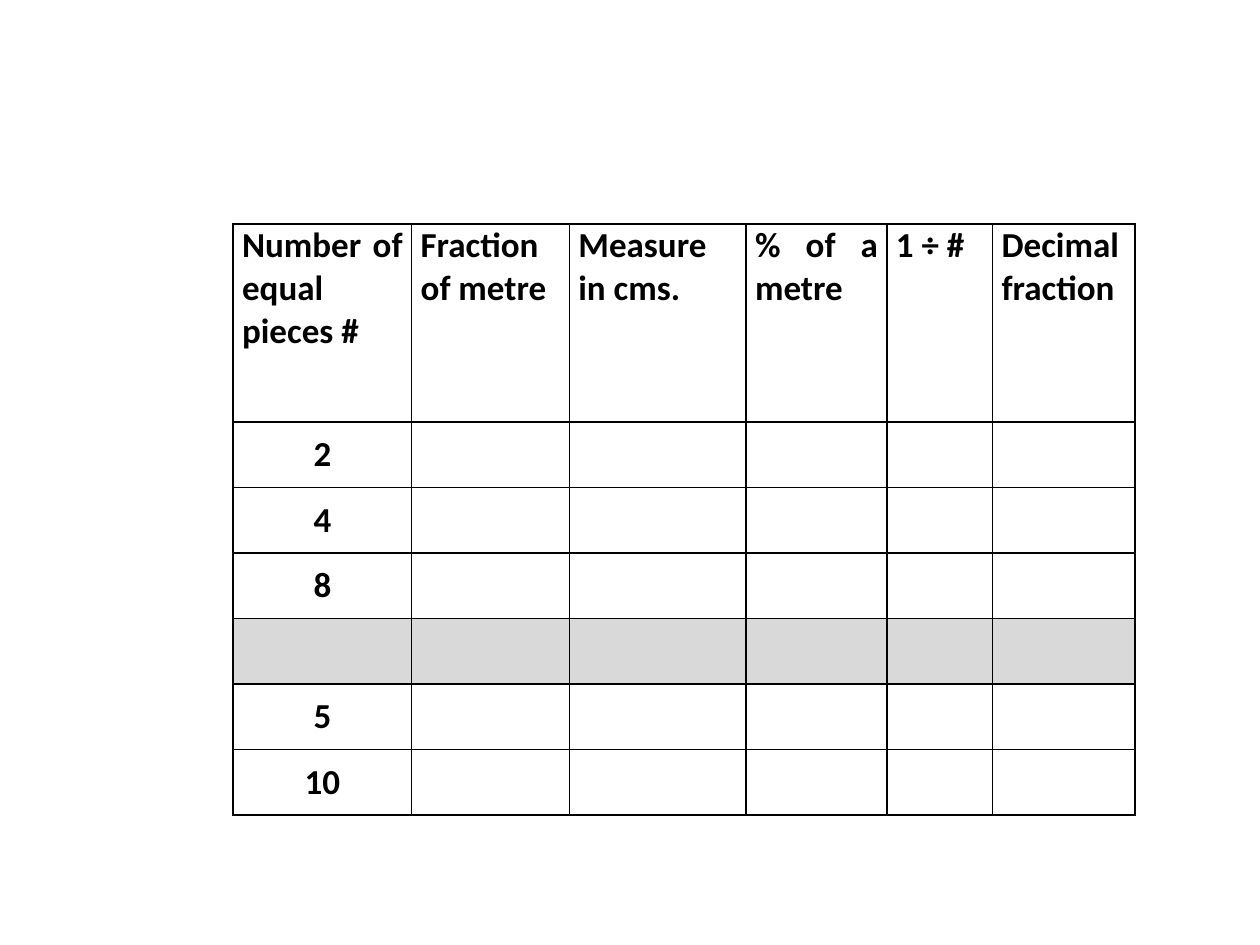
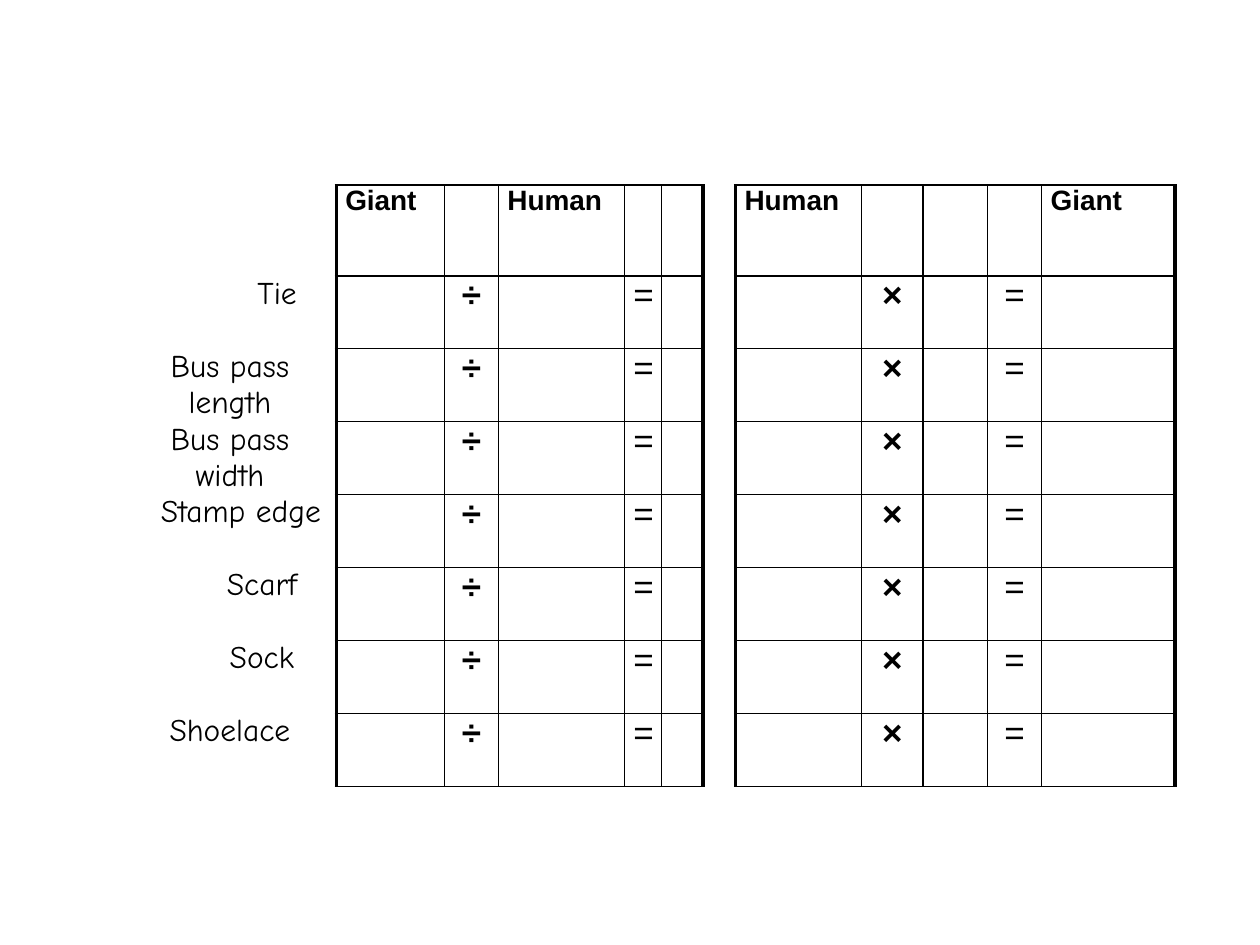
import pptx
import pptx.dml.color
import pptx.enum.text
import pptx.oxml
import pptx.oxml.ns
import pptx.util

Cm = pptx.util.Cm
ALIGN = pptx.enum.text.PP_ALIGN
ANCHOR = pptx.enum.text.MSO_ANCHOR

# Shared look
BLACK, GREY = "000000", "D9D9D9"
THIN, THICK = 1, 2.25
SIDE_MARGIN = 0.18

# Text styles: font, size, bold, alignment, vertical anchor
METRE_HEAD = ("Calibri", 20, True, ALIGN.JUSTIFY, ANCHOR.TOP)
METRE_BODY = ("Calibri", 20, True, ALIGN.CENTER, ANCHOR.MIDDLE)
GIANT_HEAD = ("Arial", 16, True, ALIGN.JUSTIFY, ANCHOR.TOP)
ITEM = ("Comic Neue", 18, False, ALIGN.CENTER, ANCHOR.TOP)
OPERATOR = ("Arial", 20, True, ALIGN.CENTER, ANCHOR.TOP)
EQUALS = ("Arial", 20, False, ALIGN.CENTER, ANCHOR.TOP)

# Slide 1: fractions of a metre (None marks the grey divider row)
METRE_HEADINGS = ["Number of equal pieces #", "Fraction of metre", "Measure in cms.",
                  "% of a metre", "1 ÷ #", "Decimal fraction"]
PIECES = ["2", "4", "8", None, "5", "10"]
METRE_WIDTHS = [3.6, 3.18, 3.56, 2.84, 2.13, 2.87]
METRE_HEIGHTS = [3.99] + [1.32] * len(PIECES)

# Slide 2: giant and human sizes, each item with its left indent in cm
ITEMS = [("Tie", 1.9), ("Bus pass length", 0), ("Bus pass width", 0), ("Stamp edge", 0.44),
         ("Scarf", 1.29), ("Sock", 1.29), ("Shoelace", 0)]
GIANT_HEADINGS = {1: "Giant", 3: "Human", 7: "Human", 11: "Giant"}
SIGNS = {2: ("÷", OPERATOR), 4: ("=", EQUALS), 8: ("×", OPERATOR), 10: ("=", EQUALS)}
GIANT_WIDTHS = [4.29, 2.18, 1.09, 2.54, 0.74, 0.84, 0.66, 2.54, 1.24, 1.3, 1.09, 2.69]
GIANT_HEIGHTS = [1.83] + [1.47] * len(ITEMS)
OPEN_COLUMNS = {0, 6}          # item names and the gap between the two grids
THICK_EDGES = {1, 6, 7, 12}    # outer sides of the two grids


def color(hex_string):
    return pptx.dml.color.RGBColor.from_string(hex_string)


def set_borders(cell, left, right, top, bottom):
    """Draw the four cell edges; a width of 0 means no line."""
    properties = cell._tc.get_or_add_tcPr()
    for position, (side, width) in enumerate(zip("LRTB", (left, right, top, bottom))):
        paint = f'<a:solidFill><a:srgbClr val="{BLACK}"/></a:solidFill>' if width else "<a:noFill/>"
        edge = pptx.oxml.parse_xml(
            f'<a:ln{side} {pptx.oxml.ns.nsdecls("a")} w="{int(width * 12700)}">{paint}</a:ln{side}>')
        properties.insert(position, edge)


def write(cell, text, style, indent=0):
    font, size, bold, align, anchor = style
    cell.text_frame.text = text
    cell.vertical_anchor = anchor
    cell.margin_left = Cm(SIDE_MARGIN + indent)
    paragraph = cell.text_frame.paragraphs[0]
    paragraph.alignment = align
    for run in paragraph.runs:
        run.font.name = font
        run.font.size = pptx.util.Pt(size)
        run.font.bold = bold
        run.font.color.rgb = color(BLACK)


def add_grid(deck, left, top, widths, heights, edges, open_columns=()):
    """Add a slide with an empty ruled table; edges are the vertical line widths."""
    slide = deck.slides.add_slide(deck.slide_layouts[6])
    grid = slide.shapes.add_table(len(heights), len(widths), Cm(left), Cm(top),
                                  Cm(sum(widths)), Cm(sum(heights))).table
    grid.first_row = grid.horz_banding = False
    for column, width in zip(grid.columns, widths):
        column.width = Cm(width)
    for row, height in zip(grid.rows, heights):
        row.height = Cm(height)
        for number, cell in enumerate(row.cells):
            cell.margin_left = cell.margin_right = Cm(SIDE_MARGIN)
            cell.margin_top = cell.margin_bottom = 0
            cell.fill.background()
            rule = 0 if number in open_columns else THIN
            set_borders(cell, edges[number], edges[number + 1], rule, rule)
    return grid


def add_metre_slide(deck):
    grid = add_grid(deck, 4.7, 4.52, METRE_WIDTHS, METRE_HEIGHTS,
                    [THIN] * (len(METRE_WIDTHS) + 1))
    for column, heading in enumerate(METRE_HEADINGS):
        write(grid.cell(0, column), heading, METRE_HEAD)
    for row, pieces in enumerate(PIECES, start=1):
        if pieces:
            write(grid.cell(row, 0), pieces, METRE_BODY)
            continue
        for cell in grid.rows[row].cells:
            cell.fill.solid()
            cell.fill.fore_color.rgb = color(GREY)


def add_giant_slide(deck):
    edges = [THICK if edge in THICK_EDGES else THIN for edge in range(len(GIANT_WIDTHS) + 1)]
    edges[0] = 0
    grid = add_grid(deck, 2.49, 3.73, GIANT_WIDTHS, GIANT_HEIGHTS, edges, OPEN_COLUMNS)
    for column, heading in GIANT_HEADINGS.items():
        write(grid.cell(0, column), heading, GIANT_HEAD)
    for row, (item, indent) in enumerate(ITEMS, start=1):
        write(grid.cell(row, 0), item, ITEM, indent)
        for column, (sign, style) in SIGNS.items():
            write(grid.cell(row, column), sign, style)


def main():
    deck = pptx.Presentation()
    deck.slide_width, deck.slide_height = Cm(25.4), Cm(19.05)
    add_metre_slide(deck)
    add_giant_slide(deck)
    deck.save("out.pptx")


if __name__ == "__main__":
    main()
